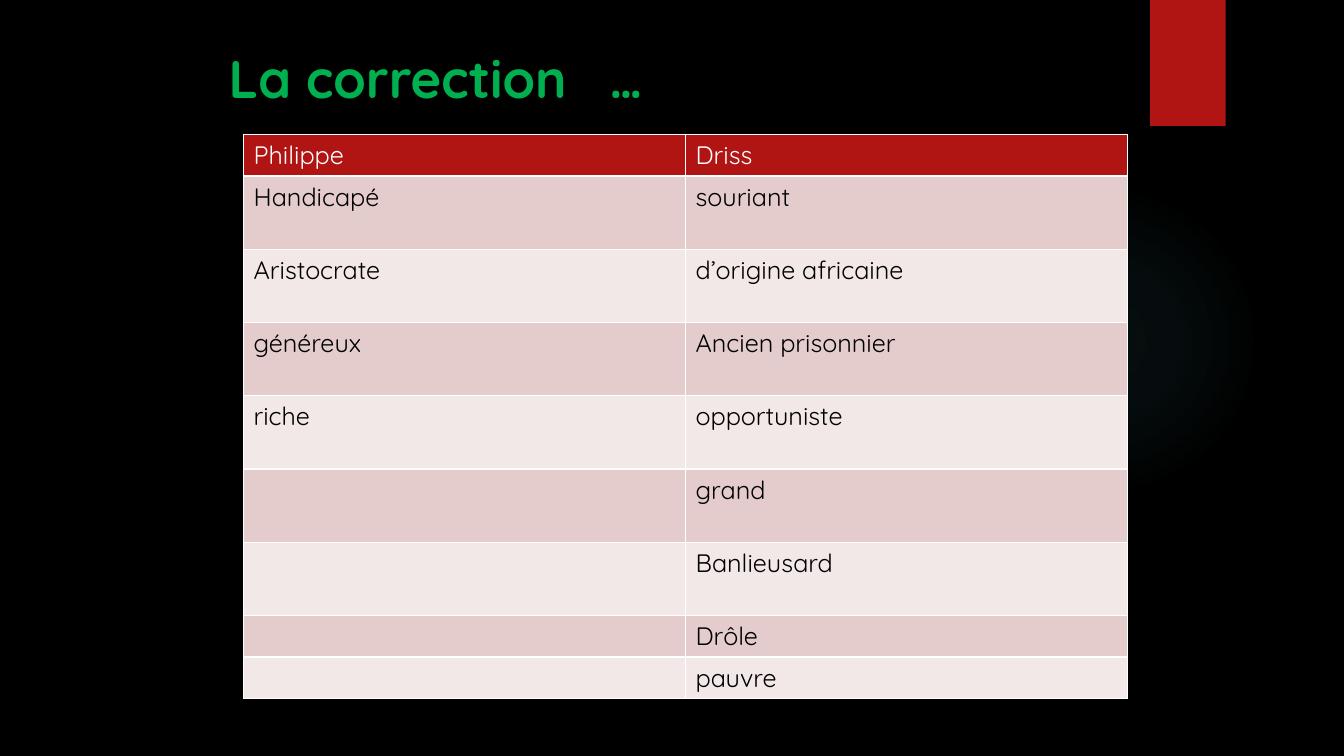
from lxml import etree
from pptx import Presentation
from pptx import util as u
from pptx.dml import color
from pptx.enum import shapes, text
from pptx.oxml import ns

FONT = "Quicksand"
RED, WHITE, BLACK, GREEN, TEAL = "B01513", "FFFFFF", "000000", "00B050", "50B9C1"
BANDS = ["E4CCCC", "F2E8E7"]
TRAITS = [
    ("Philippe", "Driss"),
    ("Handicapé", "souriant"),
    ("Aristocrate", "d’origine africaine"),
    ("généreux", "Ancien prisonnier"),
    ("riche", "opportuniste"),
    ("", "grand"),
    ("", "Banlieusard"),
    ("", "Drôle"),
    ("", "pauvre"),
]
SHORT_ROW, TALL_ROW = 29.75, 52.3
ROW_HEIGHTS = [SHORT_ROW] + [TALL_ROW] * 6 + [SHORT_ROW] * 2


def rgb(code):
    """Turn a hex string into a colour."""
    return color.RGBColor.from_string(code)


def sub(parent, tag, **attributes):
    """Append a drawing element to its parent."""
    return etree.SubElement(parent, ns.qn(tag), {k: str(v) for k, v in attributes.items()})


def write(frame, words, size=18, hue=BLACK, bold=False, tab=None):
    """Put formatted text into a text frame."""
    frame.word_wrap = True
    line = frame.paragraphs[0]
    if tab:
        stops = sub(line._p.get_or_add_pPr(), "a:tabLst")
        sub(stops, "a:tab", pos=u.Pt(tab), algn="l")
    line.font.size = u.Pt(size)
    if words:
        run = line.add_run()
        run.text = words
        run.font.name = FONT
        run.font.size = u.Pt(size)
        run.font.bold = bold
        run.font.color.rgb = rgb(hue)


def add_plain(slide, kind, left, top, width, height, hue):
    """Add a flat shape without outline or shadow."""
    plain = slide.shapes.add_shape(kind, u.Pt(left), u.Pt(top), u.Pt(width), u.Pt(height))
    plain.shadow.inherit = False
    plain.line.fill.background()
    plain.fill.solid()
    plain.fill.fore_color.rgb = rgb(hue)
    return plain


def add_glow(slide, left, top, size):
    """Add the faint round glow that fades outwards."""
    glow = add_plain(slide, shapes.MSO_SHAPE.OVAL, left, top, size, size, TEAL)
    solid = glow._element.spPr.find(ns.qn("a:solidFill"))
    gradient = etree.Element(ns.qn("a:gradFill"), rotWithShape="1")
    stops = sub(gradient, "a:gsLst")
    for position, opacity in [(0, 7), (36, 6), (69, 0)]:
        stop = sub(stops, "a:gs", pos=position * 1000)
        sub(sub(stop, "a:srgbClr", val=TEAL), "a:alpha", val=opacity * 1000)
    centre = sub(gradient, "a:path", path="circle")
    sub(centre, "a:fillToRect", l=50000, t=50000, r=50000, b=50000)
    solid.getparent().replace(solid, gradient)


def add_title(slide, left, top, width, height):
    """Add the slide title."""
    title = slide.shapes.add_textbox(u.Pt(left), u.Pt(top), u.Pt(width), u.Pt(height))
    title.text_frame.vertical_anchor = text.MSO_ANCHOR.TOP
    write(title.text_frame, "La correction\t…", size=37.8, hue=GREEN, bold=True, tab=272)


def style_cell(cell, hue):
    """Give a cell white borders and a fill."""
    properties = cell._tc.get_or_add_tcPr()
    for side in "LRTB":
        border = sub(properties, f"a:ln{side}", w=u.Pt(1))
        sub(sub(border, "a:solidFill"), "a:srgbClr", val=WHITE)
    cell.fill.solid()
    cell.fill.fore_color.rgb = rgb(hue)


def add_traits(slide, left, top, width):
    """Add the table that compares the two characters."""
    traits = slide.shapes.add_table(len(TRAITS), 2, u.Pt(left), u.Pt(top),
                                    u.Pt(width), u.Pt(sum(ROW_HEIGHTS))).table
    for column in traits.columns:
        column.width = u.Pt(width / 2)
    for i, (row, words) in enumerate(zip(traits.rows, TRAITS)):
        row.height = u.Pt(ROW_HEIGHTS[i])
        for cell, word in zip(row.cells, words):
            style_cell(cell, BANDS[(i - 1) % 2] if i else RED)
            write(cell.text_frame, word, hue=BLACK if i else WHITE)


def main():
    """Build and save the slide."""
    deck = Presentation()
    deck.slide_width, deck.slide_height = u.Pt(960), u.Pt(540)
    slide = deck.slides.add_slide(deck.slide_layouts[6])
    slide.background.fill.solid()
    slide.background.fill.fore_color.rgb = rgb(BLACK)
    add_glow(slide, 677.5, 131.8, 221.8)
    add_plain(slide, shapes.MSO_SHAPE.RECTANGLE, 821.5, 0, 54, 90, RED)
    add_title(slide, 156.2, 28.8, 648, 90)
    add_traits(slide, 174, 96, 631.4)
    deck.save("out.pptx")


if __name__ == "__main__":
    main()
